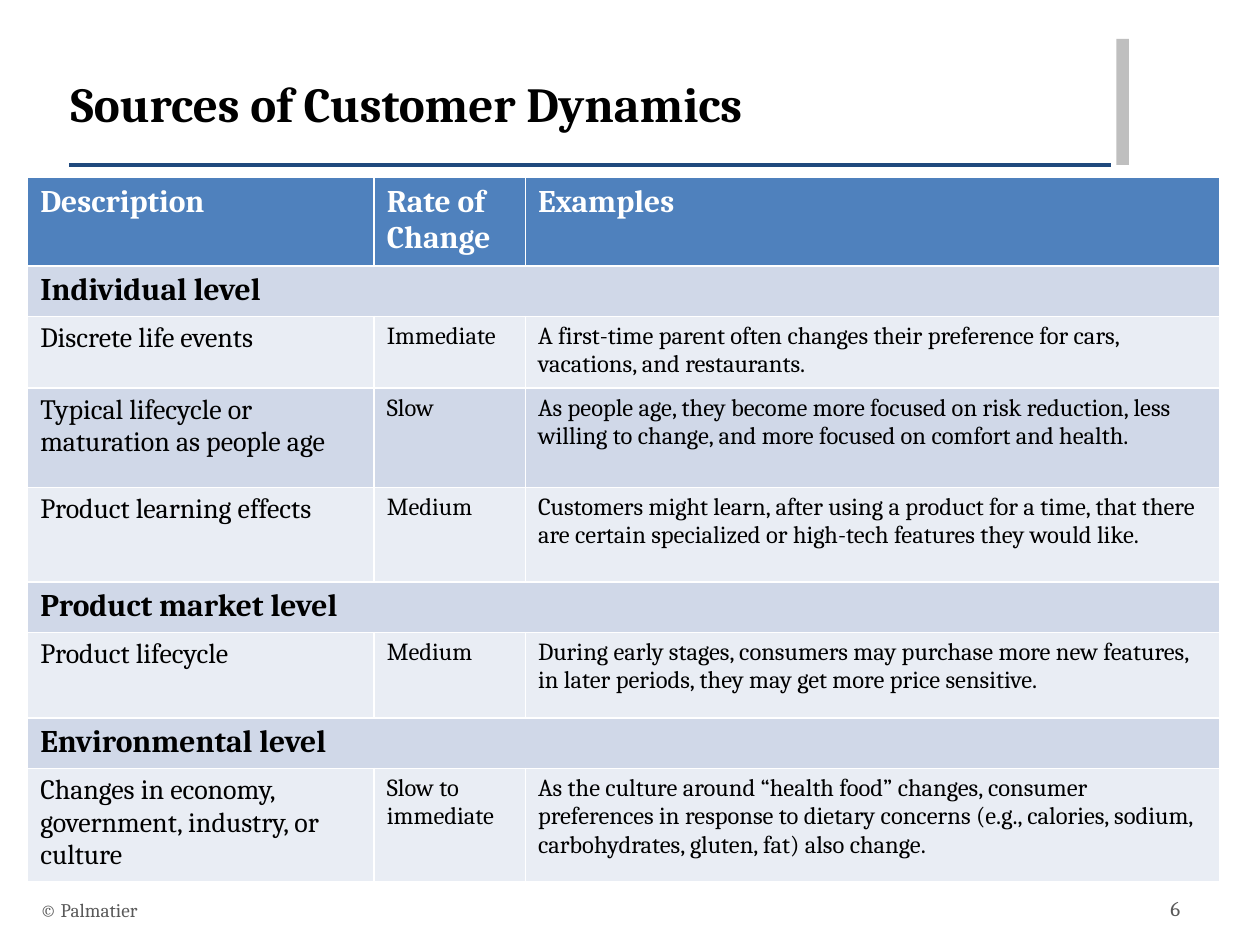
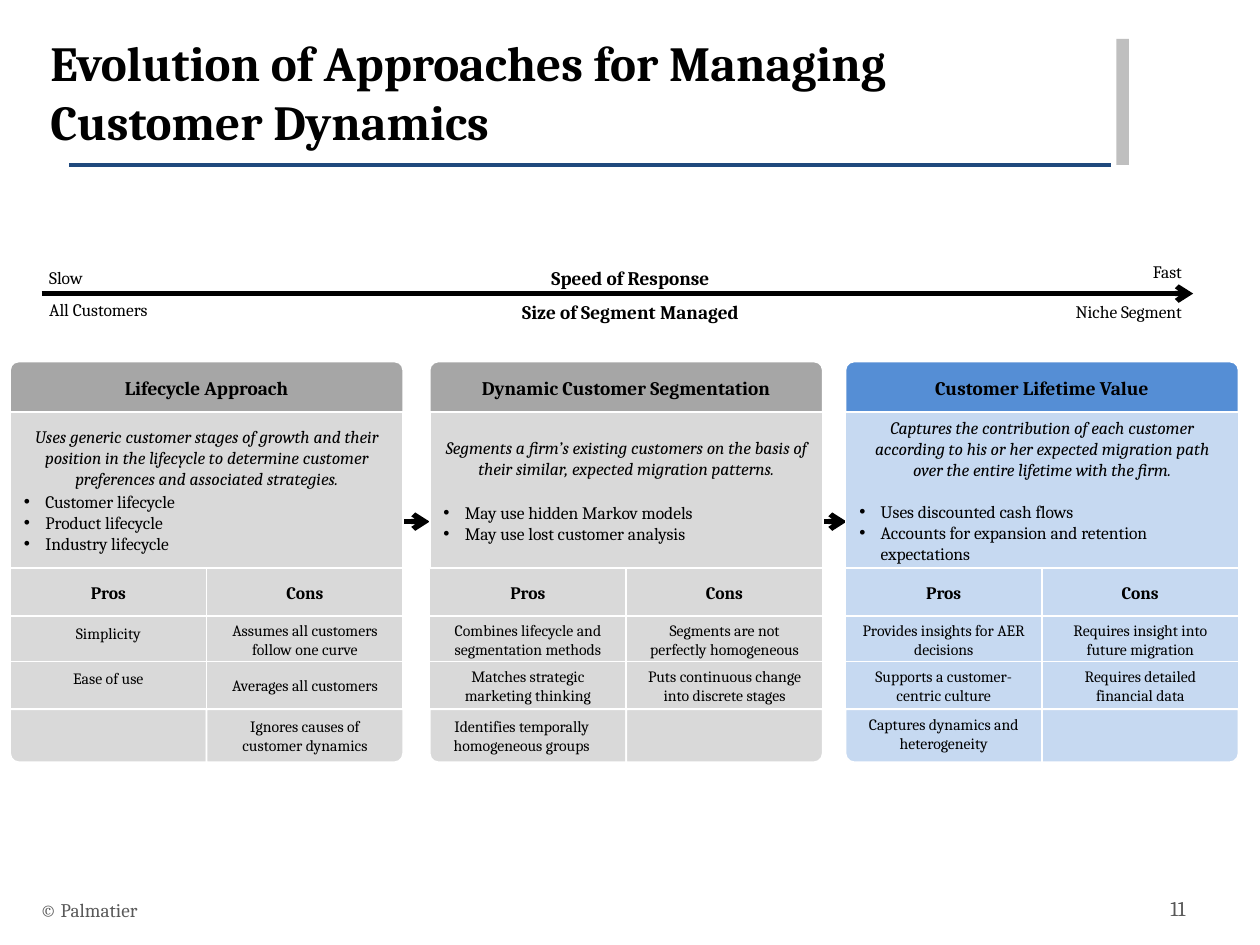
from lxml import etree
from pptx import Presentation
from pptx import util as u
from pptx.dml.color import RGBColor
from pptx.enum import shapes, text
from pptx.oxml.ns import qn

FONT = "Cambria"
BLACK = RGBColor(0x00, 0x00, 0x00)
WHITE = RGBColor(0xFF, 0xFF, 0xFF)
FOOTER_GREY = RGBColor(0x59, 0x59, 0x59)
BAR_GREY = RGBColor(0xBF, 0xBF, 0xBF)
RULE_NAVY = RGBColor(0x1F, 0x49, 0x7D)
HEADER_BLUE = RGBColor(0x4F, 0x81, 0xBD)
BAND_DARK = RGBColor(0xD0, 0xD8, 0xE8)
BAND_LIGHT = RGBColor(0xE9, 0xED, 0xF4)
HEAD_GREY = RGBColor(0xA6, 0xA6, 0xA6)
CARD_GREY = RGBColor(0xD9, 0xD9, 0xD9)
HEAD_BLUE = RGBColor(0x55, 0x8E, 0xD5)
CARD_BLUE = RGBColor(0xC6, 0xD9, 0xF1)

LEFT, CENTER, RIGHT = text.PP_ALIGN.LEFT, text.PP_ALIGN.CENTER, text.PP_ALIGN.RIGHT
TOP, MIDDLE = text.MSO_ANCHOR.TOP, text.MSO_ANCHOR.MIDDLE
RECT = shapes.MSO_SHAPE.RECTANGLE
ROUND_TOP = shapes.MSO_SHAPE.ROUND_2_SAME_RECTANGLE
ROUND_CORNER = shapes.MSO_SHAPE.ROUND_1_RECTANGLE


def write(frame, words, size=10, bold=False, italic=False, color=BLACK, align=LEFT,
          anchor=None, inset=None, bullet=False, before=0):
    """Fill the first paragraph of a frame, or add one after the existing text."""
    para = frame.add_paragraph() if frame.text else frame.paragraphs[0]
    frame.word_wrap = True
    if anchor is not None:
        frame.vertical_anchor = anchor
    if inset:
        frame.margin_left = frame.margin_right = u.Inches(inset[0])
        frame.margin_top = frame.margin_bottom = u.Inches(inset[1])
    if bullet:
        props = para._p.get_or_add_pPr()
        props.set("marL", str(u.Inches(0.17)))
        props.set("indent", str(-u.Inches(0.17)))
        etree.SubElement(props, qn("a:buFont")).set("typeface", "Arial")
        etree.SubElement(props, qn("a:buChar")).set("char", "•")
    para.alignment = align
    para.space_before = u.Pt(before)
    run = para.add_run()
    run.text = words
    font = run.font
    font.name, font.size, font.bold, font.italic = FONT, u.Pt(size), bold, italic
    font.color.rgb = color


def draw_line(slide, x1, x2, y, color, width, arrow=False):
    line = slide.shapes.add_connector(
        shapes.MSO_CONNECTOR.STRAIGHT, *map(u.Inches, (x1, y, x2, y)))
    line.line.color.rgb, line.line.width = color, u.Pt(width)
    if arrow:
        etree.SubElement(line.line._get_or_add_ln(), qn("a:tailEnd")).set("type", "arrow")
    etree.SubElement(line._element.spPr, qn("a:effectLst"))


prs = Presentation()
prs.slide_width, prs.slide_height = u.Inches(10), u.Inches(7.5)

# Shared frame: title, rule, bar, footer and page number
frames = [
    ("Sources of Customer Dynamics", (0.46, 0.53, 8.18, 0.88), "6"),
    ("Evolution of Approaches for Managing Customer Dynamics", (0.3, 0.21, 8.18, 0.94), "11"),
]
for heading, box, number in frames:
    slide = prs.slides.add_slide(prs.slide_layouts[5])
    draw_line(slide, 0.55, 8.82, 1.31, RULE_NAVY, 2)
    bar = slide.shapes.add_shape(RECT, *map(u.Inches, (8.86, 0.31, 0.1, 1)))
    bar.shadow.inherit = False
    bar.fill.solid()
    bar.fill.fore_color.rgb = BAR_GREY
    bar.line.fill.background()
    title = slide.shapes.title
    title.left, title.top, title.width, title.height = map(u.Inches, box)
    title.text_frame.auto_size = text.MSO_AUTO_SIZE.NONE
    write(title.text_frame, heading, size=28, bold=True, anchor=TOP)
    owner = slide.shapes.add_textbox(*map(u.Inches, (0.22, 7.02, 6.7, 0.4)))
    write(owner.text_frame, "© Palmatier", size=11, color=FOOTER_GREY, anchor=MIDDLE)
    page = slide.shapes.add_textbox(*map(u.Inches, (9.19, 7.06, 0.61, 0.4)))
    write(page.text_frame, number, size=12, color=FOOTER_GREY)

sources, evolution = prs.slides

# Slide 1: table of sources; one-item rows are level headings
source_rows = [
    (0.65, ["Description", "Rate of Change", "Examples"]),
    (0.37, ["Individual level"]),
    (0.53, ["Discrete life events", "Immediate",
            "A first-time parent often changes their preference for cars, vacations, "
            "and restaurants."]),
    (0.79, ["Typical lifecycle or maturation as people age", "Slow",
            "As people age, they become more focused on risk reduction, less willing to "
            "change, and more focused on comfort and health."]),
    (0.75, ["Product learning effects", "Medium",
            "Customers might learn, after using a product for a time, that there are "
            "certain specialized or high-tech features they would like."]),
    (0.37, ["Product market level"]),
    (0.68, ["Product lifecycle", "Medium",
            "During early stages, consumers may purchase more new features, in later "
            "periods, they may get more price sensitive."]),
    (0.37, ["Environmental level"]),
    (0.85, ["Changes in economy, government, industry, or culture", "Slow to immediate",
            "As the culture around “health food” changes, consumer preferences in response "
            "to dietary concerns (e.g., calories, sodium, carbohydrates, gluten, fat) also "
            "change."]),
]
table = sources.shapes.add_table(
    len(source_rows), 3, *map(u.Inches, (0.22, 1.41, 9.46, 5.36))).table
for column, width in zip(table.columns, (2.75, 1.2, 5.51)):
    column.width = u.Inches(width)
for r, (height, entries) in enumerate(source_rows):
    table.rows[r].height = u.Inches(height)
    is_level = len(entries) == 1
    for cell in table.rows[r].cells:
        cell.fill.solid()
        cell.fill.fore_color.rgb = (
            HEADER_BLUE if r == 0 else BAND_DARK if r % 2 else BAND_LIGHT)
    if is_level:
        table.cell(r, 0).merge(table.cell(r, 2))
    for c, entry in enumerate(entries):
        strong = r == 0 or is_level
        write(table.cell(r, c).text_frame, entry, bold=strong,
              size=18 if strong else 16 if c == 0 else 14,
              color=WHITE if r == 0 else BLACK)

# Slide 2: scale labels
scale_labels = [
    ("Speed of Response", (4.02, 2.07, 1.97, 0.28), CENTER),
    ("Slow", (0.3, 2.08, 1.33, 0.26), LEFT),
    ("Fast", (8.86, 2.03, 0.61, 0.26), RIGHT),
    ("Size of Segment Managed", (3.94, 2.34, 2.13, 0.28), CENTER),
    ("All Customers", (0.3, 2.33, 1.33, 0.26), LEFT),
    ("Niche Segment", (8.26, 2.35, 1.21, 0.26), RIGHT),
]
for label, box, align in scale_labels:
    holder = evolution.shapes.add_textbox(*map(u.Inches, box))
    main = align == CENTER
    write(holder.text_frame, label, size=11 if main else 10, bold=main, align=align,
          inset=(0.09, 0.04))

# Scale arrow and the arrows between approaches
for start, end, y in ((0.33, 9.47, 2.33), (3.2, 3.41, 4.14), (6.26, 6.72, 4.14)):
    draw_line(evolution, start, end, y, BLACK, 3, arrow=True)

# Approaches: left, colours, name, summary, gap and bullets, pros/cons, last-row text offset
approaches = [
    (0.08, HEAD_GREY, CARD_GREY, "Lifecycle Approach",
     "Uses generic customer stages of growth and their position in the lifecycle to "
     "determine customer preferences and associated strategies.",
     1, ["Customer lifecycle", "Product lifecycle", "Industry lifecycle"],
     [("Simplicity", "Assumes all customers follow one curve"),
      ("Ease of use", "Averages all customers"),
      ("", "Ignores causes of customer dynamics")], (0, 0.02)),
    (3.41, HEAD_GREY, CARD_GREY, "Dynamic Customer Segmentation",
     "Segments a firm’s existing customers on the basis of their similar, expected "
     "migration patterns.",
     13, ["May use hidden Markov models", "May use lost customer analysis"],
     [("Combines lifecycle and segmentation methods",
       "Segments are not perfectly homogeneous"),
      ("Matches strategic marketing thinking",
       "Puts continuous change into discrete stages"),
      ("Identifies temporally homogeneous groups", "")], (-0.05, 0.02)),
    (6.71, HEAD_BLUE, CARD_BLUE, "Customer Lifetime Value",
     "Captures the contribution of each customer according to his or her expected "
     "migration path over the entire lifetime with the firm.",
     12, ["Uses discounted cash flows", "Accounts for expansion and retention expectations"],
     [("Provides insights for AER decisions", "Requires insight into future migration"),
      ("Supports a customer-centric culture", "Requires detailed financial data"),
      ("Captures dynamics and heterogeneity", "")], (0, 0)),
]
HALF = 1.56
INSET = (0.11, 0.06)
ROWS = [(4.51, 0.38), (4.89, 0.38), (5.25, 0.38), (5.63, 0.42)]

for left, head_fill, fill, name, summary, gap, bullets, pairs, (dx, dy) in approaches:
    card = evolution.shapes.add_group_shape().shapes
    parts = [(ROUND_TOP, left, 2.87, 2 * HALF, 0.4, head_fill, name, 11, True)]
    for (top, height), pair in zip(ROWS, [("Pros", "Cons")] + pairs):
        is_head, is_last = top == ROWS[0][0], top == ROWS[-1][0]
        for side, words in enumerate(pair):
            parts.append((ROUND_CORNER if is_last else RECT, left + side * HALF, top, HALF,
                          height, fill, words, 10 if is_head else 9, is_head))
    parts.append((RECT, left, 3.27, 2 * HALF, 1.24, fill, summary, 10, False))

    for kind, x, y, w, h, part_fill, words, size, bold in parts:
        part = card.add_shape(kind, *map(u.Inches, (x, y, w, h)))
        part.shadow.inherit = False
        part.fill.solid()
        part.fill.fore_color.rgb = part_fill
        part.line.color.rgb, part.line.width = WHITE, u.Pt(1)
        holder = part
        if kind == ROUND_CORNER:
            # Turn the rounded corner to the outer bottom; upright text goes on top
            part.rotation = 180
            if x > left:
                part._element.spPr.xfrm.set("flipH", "1")
            if not words:
                continue
            holder = card.add_textbox(*map(u.Inches, (x + dx, y + dy, w, 0.38)))
        write(holder.text_frame, words, size=size, bold=bold, italic=words == summary,
              align=CENTER, inset=INSET,
              anchor=TOP if words in ("Simplicity", "Ease of use") else MIDDLE)
        if words == summary:
            for i, point in enumerate(bullets):
                write(part.text_frame, point, bullet=True, before=0 if i else gap)

prs.save("out.pptx")
